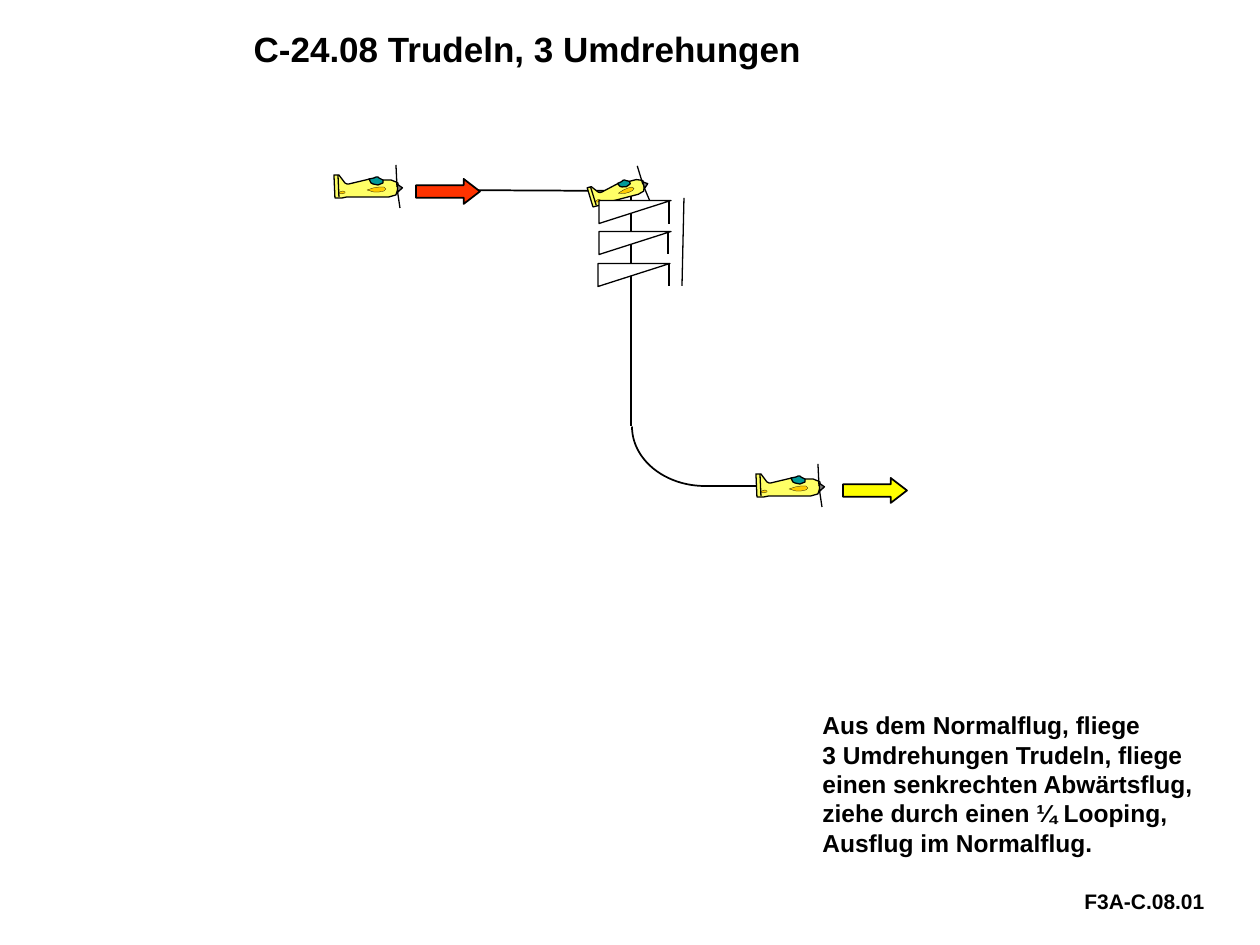
import math
import pptx
import pptx.util
import pptx.dml.color
import pptx.enum.shapes
import pptx.enum.text
import pptx.oxml

SCALE = 914400 / 126
FONT = "Arial"
COLORS = {
    "black": "000000", "white": "FFFFFF", "body": "FFFF66", "glass": "009999",
    "wing": "FFCC00", "hub": "808080", "red": "FF3300", "yellow": "FFFF00",
}

TITLE = [["C-24.08 Trudeln, 3 Umdrehungen"]]
CODE = [["F3A-C.08.01"]]
STORY = [
    ["Aus dem Normalflug, fliege", "3 Umdrehungen Trudeln, fliege",
     "einen senkrechten Abwärtsflug,"],
    ["ziehe durch einen ¼ Looping,", "Ausflug im Normalflug."],
]

PATHS = [((631, 190), (631, 426)), ((808, 486), (702, 486)), ((436, 190), (634, 191))]
LOOP = (632, 367, 146, 119)
TURNS = [(635, 212), (635, 243), (634, 275)]
TICKS = [((669, 201), (669, 224)), ((668, 231), (668, 254)),
         ((669, 263), (669, 286)), ((684, 198), (682, 286))]
ARROWS = [((416, 179, 64, 25), "red"), ((843, 478, 64, 25), "yellow")]
PLANES = [((334, 174), 1, 0), ((587, 187), 0.87, -14.5), ((756, 473), 1, 0)]

PARTS = [
    ("body", 0.75, [(49, 6), (57, 6), (62, 8), (64, 9), (64, 15), (62, 21), (55, 23),
                    (42, 23), (13, 23), (8, 24), (1, 24), (0, 1), (5, 1), (11, 9),
                    (13, 10), (15, 10), (36, 5), (38, 9), (44, 10), (48, 9)]),
    ("glass", 0.75, [(35, 5), (37, 9), (39, 10), (44, 11), (49, 9), (49, 6),
                     (47, 5), (45, 4), (44, 3), (42, 3), (40, 4)]),
    ("wing", 0.13, [(33, 16), (39, 14), (45, 13), (50, 13), (52, 15), (50, 17),
                    (45, 18), (40, 18)]),
    ("wing", 0.13, [(4, 19), (8, 20), (11, 19), (11, 18), (9, 17), (6, 18)]),
]
BLADE = ((66, 34), (63, 14))
STRUTS = [((5, 23), (4, 1)), ((63, 13), (62, -9))]
HUB = ((66, 14), (8, 5), 86)

KINDS = pptx.enum.shapes.MSO_SHAPE


def emu(px):
    return round(px * SCALE)


def tint(name):
    return pptx.dml.color.RGBColor.from_string(COLORS[name])


def paint(shape, fill, width):
    shape.shadow.inherit = False
    if fill:
        shape.fill.solid()
        shape.fill.fore_color.rgb = tint(fill)
    else:
        shape.fill.background()
    shape.line.color.rgb = tint("black")
    shape.line.width = pptx.util.Pt(width)


def line(shapes, start, end, width=0.75):
    link = shapes.add_connector(pptx.enum.shapes.MSO_CONNECTOR.STRAIGHT,
                                *map(emu, start + end))
    link.line.color.rgb = tint("black")
    link.line.width = pptx.util.Pt(width)
    props = link._element.spPr
    props.append(pptx.oxml.parse_xml(
        '<a:effectLst xmlns:a="http://schemas.openxmlformats.org/drawingml/2006/main"/>'))


def preset(shapes, kind, box, fill, width, turn=0):
    shape = shapes.add_shape(kind, *map(emu, box))
    shape.rotation = turn
    paint(shape, fill, width)
    return shape


def spun(shapes, kind, mid, size, fill, turn):
    box = (mid[0] - size[0] / 2, mid[1] - size[1] / 2) + size
    preset(shapes, kind, box, fill, 0.75, turn)


def plane(slide, home, zoom, tilt):
    cos = zoom * math.cos(math.radians(tilt))
    sin = zoom * math.sin(math.radians(tilt))

    def place(spot):
        x, y = spot
        return home[0] + x * cos - y * sin, home[1] + x * sin + y * cos

    shapes = slide.shapes.add_group_shape().shapes
    line(shapes, *map(place, BLADE))
    for fill, width, spots in PARTS:
        first, *rest = [tuple(map(emu, place(spot))) for spot in spots]
        pen = shapes.build_freeform(*first)
        pen.add_line_segments(rest, close=True)
        paint(pen.convert_to_shape(), fill, width)
    rudder, blade = STRUTS
    line(shapes, *map(place, rudder))
    mid, size, turn = HUB
    size = tuple(side * zoom for side in size)
    spun(shapes, KINDS.ISOSCELES_TRIANGLE, place(mid), size, "hub", turn + tilt)
    line(shapes, *map(place, blade))


def write(shape, box, paras, size):
    shape.left, shape.top, shape.width, shape.height = map(emu, box)
    frame = shape.text_frame
    frame.word_wrap = True
    frame.auto_size = pptx.enum.text.MSO_AUTO_SIZE.SHAPE_TO_FIT_TEXT
    frame.vertical_anchor = pptx.enum.text.MSO_ANCHOR.TOP
    for i, rows in enumerate(paras):
        para = frame.add_paragraph() if i else frame.paragraphs[0]
        para.alignment = pptx.enum.text.PP_ALIGN.LEFT
        para.space_before = pptx.util.Pt(0)
        for j, text in enumerate(rows):
            if j:
                para.add_line_break()
            run = para.add_run()
            run.text = text
            run.font.name = FONT
            run.font.size = pptx.util.Pt(size)
            run.font.bold = True
            run.font.color.rgb = tint("black")


def main():
    deck = pptx.Presentation()
    deck.slide_width, deck.slide_height = emu(1260), emu(945)
    slide = deck.slides.add_slide(deck.slide_layouts[5])
    shapes = slide.shapes

    write(shapes.title, (241, 21, 939, 53), TITLE, 20)
    write(shapes.add_textbox(0, 0, 0, 0), (1072, 882, 166, 38), CODE, 12)
    story = shapes.add_textbox(0, 0, 0, 0)
    story.fill.solid()
    story.fill.fore_color.rgb = tint("white")
    write(story, (810, 704, 410, 161), STORY, 14)

    for start, end in PATHS:
        line(shapes, start, end, 1)
    loop = preset(shapes, KINDS.ARC, LOOP, None, 1)
    loop.adjustments[0], loop.adjustments[1] = 54, 108
    for home, zoom, tilt in PLANES:
        plane(slide, home, zoom, tilt)
    for box, fill in ARROWS:
        arrow = preset(shapes, KINDS.RIGHT_ARROW, box, fill, 1)
        arrow.adjustments[1] = 0.65
    for mid in TURNS:
        spun(shapes, KINDS.RIGHT_TRIANGLE, mid, (23, 72), "white", 90)
    for start, end in TICKS:
        line(shapes, start, end)

    deck.save("out.pptx")


if __name__ == "__main__":
    main()
